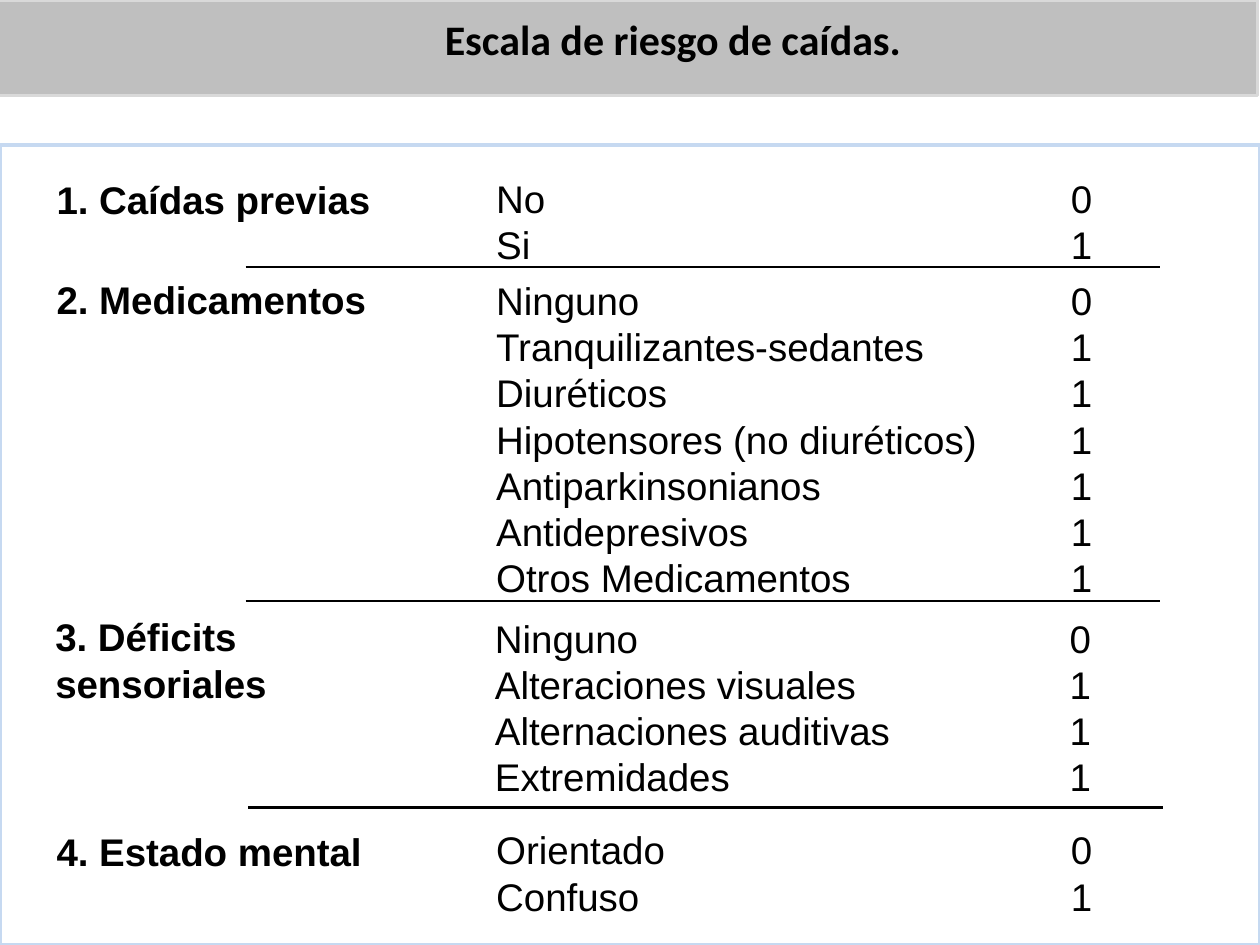
from dataclasses import dataclass

from lxml import etree
from pptx import Presentation
from pptx.dml.color import RGBColor
from pptx.enum.shapes import MSO_CONNECTOR, MSO_SHAPE
from pptx.enum.text import MSO_ANCHOR, MSO_AUTO_SIZE, PP_ALIGN
from pptx.oxml.ns import qn
from pptx.util import Inches, Pt

RECTANGLE = MSO_SHAPE.RECTANGLE
STRAIGHT = MSO_CONNECTOR.STRAIGHT
TOP = MSO_ANCHOR.TOP
LEFT = PP_ALIGN.LEFT
GROW = MSO_AUTO_SIZE.SHAPE_TO_FIT_TEXT


@dataclass(frozen=True)
class Theme:
    ink: RGBColor = RGBColor(0x00, 0x00, 0x00)
    paper: RGBColor = RGBColor(0xFF, 0xFF, 0xFF)
    band: RGBColor = RGBColor(0xBF, 0xBF, 0xBF)
    band_border: RGBColor = RGBColor(0xD9, 0xD9, 0xD9)
    panel_border: RGBColor = RGBColor(0xC6, 0xD9, 0xF1)
    title_font: str = "Calibri"
    body_font: str = "Arial"
    title_size: Pt = Pt(24)
    body_size: Pt = Pt(22)
    border_width: Pt = Pt(2)
    rule_width: Pt = Pt(1.5)


theme = Theme()

# Label, label top, options top, left shift, options width, (option, score) pairs
sections = [
    ("1. Caídas previas", 1.35, 1.34, 0, 0.77, [("No", 0), ("Si", 1)]),
    ("2. Medicamentos", 2.14, 2.15, 0, 4.06, [
        ("Ninguno", 0),
        ("Tranquilizantes-sedantes", 1),
        ("Diuréticos", 1),
        ("Hipotensores (no diuréticos)", 1),
        ("Antiparkinsonianos", 1),
        ("Antidepresivos", 1),
        ("Otros Medicamentos", 1),
    ]),
    ("3. Déficits sensoriales", 4.82, 4.83, -0.01, 4.06, [
        ("Ninguno", 0),
        ("Alteraciones visuales", 1),
        ("Alternaciones auditivas", 1),
        ("Extremidades", 1),
    ]),
    ("4. Estado mental", 6.52, 6.51, 0, 4.06, [("Orientado", 0), ("Confuso", 1)]),
]
label_left, option_left, score_left = 0.35, 3.84, 8.4
label_width, score_width = 3.38, 0.77
line_height, box_padding = 0.37, 0.1
rules = [(1.95, 2.12), (1.95, 4.77), (1.97, 6.41)]
rule_length = 7.26

presentation = Presentation()
presentation.slide_width = Inches(10)
presentation.slide_height = Inches(7.5)
slide = presentation.slides.add_slide(presentation.slide_layouts[5])
shapes = slide.shapes


def add_panel(left, top, width, height, fill, border):
    panel = shapes.add_shape(
        RECTANGLE, Inches(left), Inches(top), Inches(width), Inches(height))
    panel.shadow.inherit = False
    panel.fill.solid()
    panel.fill.fore_color.rgb = fill
    panel.line.color.rgb = border
    panel.line.width = theme.border_width


def add_lines(left, top, width, lines, bold=False):
    """Add a white text box with one paragraph per line."""
    height = line_height * len(lines) + box_padding
    box = shapes.add_textbox(
        Inches(left), Inches(top), Inches(width), Inches(height))
    box.fill.solid()
    box.fill.fore_color.rgb = theme.paper
    frame = box.text_frame
    frame.word_wrap = True
    frame.auto_size = GROW
    for index, line in enumerate(lines):
        paragraph = frame.add_paragraph() if index else frame.paragraphs[0]
        run = paragraph.add_run()
        run.text = line
        run.font.name = theme.body_font
        run.font.size = theme.body_size
        run.font.bold = bold
        run.font.color.rgb = theme.ink


add_panel(-0.02, 0, 10, 0.76, theme.band, theme.band_border)
add_panel(0, 1.15, 10, 6.35, theme.paper, theme.panel_border)

for label, label_top, options_top, shift, options_width, options in sections:
    names = [name for name, score in options]
    scores = [str(score) for name, score in options]
    add_lines(label_left + shift, label_top, label_width, [label], bold=True)
    add_lines(option_left + shift, options_top, options_width, names)
    add_lines(score_left + shift, options_top, score_width, scores)

for left, top in rules:
    rule = shapes.add_connector(
        STRAIGHT, Inches(left), Inches(top), Inches(left + rule_length), Inches(top))
    rule.line.color.rgb = theme.ink
    rule.line.width = theme.rule_width
    etree.SubElement(rule.element.spPr, qn("a:effectLst"))

title = shapes.title
title.left, title.top = Inches(3.43), Inches(0.06)
title.width, title.height = Inches(3.94), Inches(0.5)
title.element.getparent().append(title.element)  # in front of the band
frame = title.text_frame
frame.word_wrap = False
frame.auto_size = GROW
frame.vertical_anchor = TOP
paragraph = frame.paragraphs[0]
paragraph.alignment = LEFT
run = paragraph.add_run()
run.text = "Escala de riesgo de caídas."
run.font.name = theme.title_font
run.font.size = theme.title_size
run.font.bold = True
run.font.color.rgb = theme.ink

presentation.save("out.pptx")
